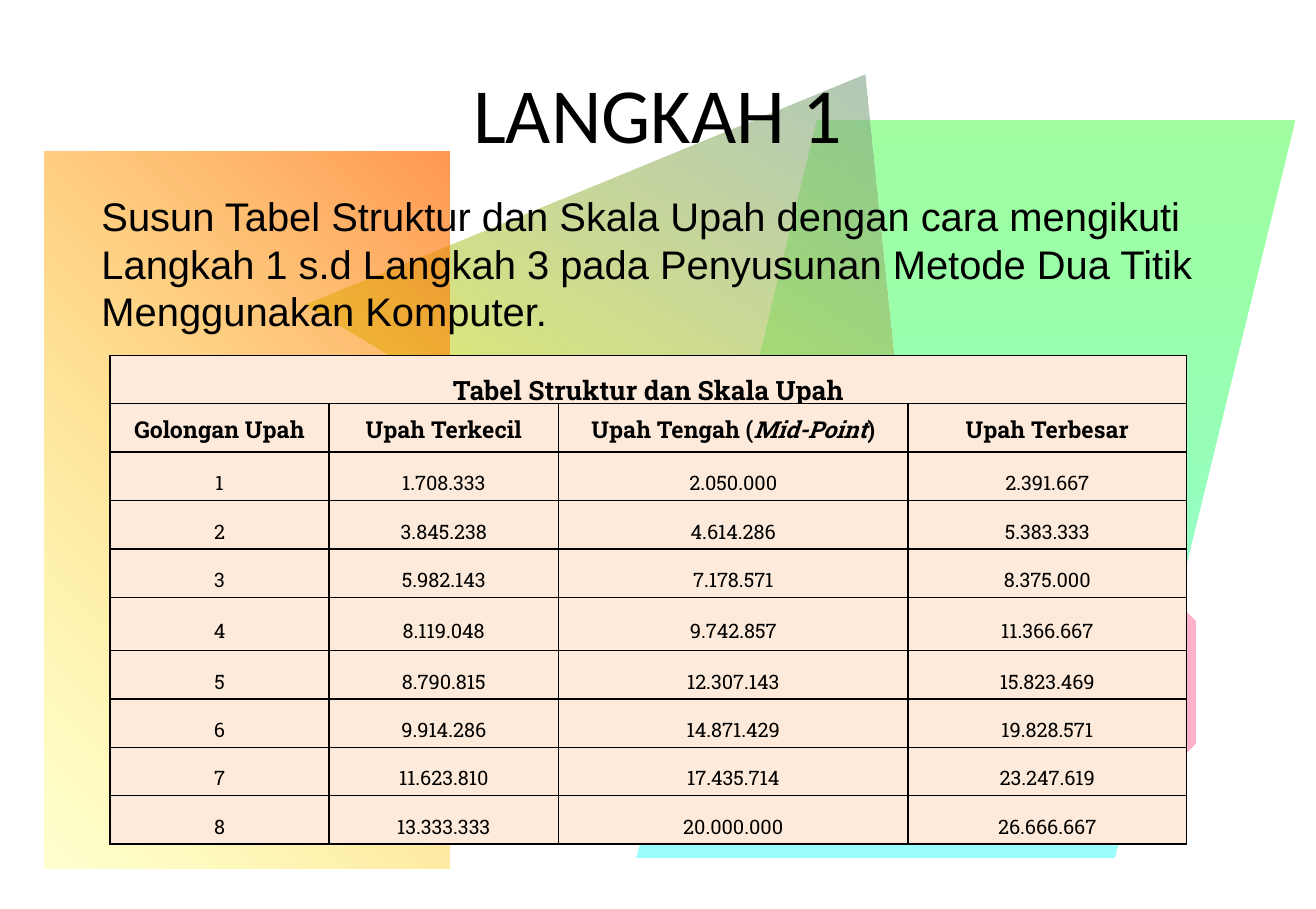
"""Build the wage structure and scale slide."""
import pptx
import pptx.util
import pptx.dml.color
import pptx.enum.shapes
import pptx.enum.text
import pptx.oxml
import pptx.oxml.ns

RGBColor = pptx.dml.color.RGBColor
SHAPE = pptx.enum.shapes.MSO_SHAPE
ANCHOR = pptx.enum.text.MSO_ANCHOR
ALIGN = pptx.enum.text.PP_ALIGN
Pt = pptx.util.Pt

EMU_PER_PX = 4572
BLACK = RGBColor(0, 0, 0)
PEACH = RGBColor(0xFD, 0xEA, 0xDA)
GREEN = RGBColor(0, 0xFF, 0)
CYAN = RGBColor(0x66, 0xFF, 0xFF)
BLUE = RGBColor(0x4F, 0x81, 0xBD)
YELLOW = RGBColor(0xFF, 0xFF, 0)
ORANGE = RGBColor(0xFF, 0x66, 0)
PINK = RGBColor(0xFF, 0x66, 0x99)

BACKDROP = [
    (SHAPE.PARALLELOGRAM, (1064, 202, 1100, 1232), 0, 0.274, 270, ((GREEN, 37), (CYAN, 65))),
    (SHAPE.ISOSCELES_TRIANGLE, (632, 68, 1210, 810), 30.9, 0.5, 270, ((BLUE, 60), (YELLOW, 70))),
    (SHAPE.RECTANGLE, (74, 254, 678, 1198), 0, None, 45, ((YELLOW, 19), (ORANGE, 68))),
    (SHAPE.OCTAGON, (1020, 406, 490, 1468), 90, 0.293, 270, ((PINK, 51), (GREEN, 68))),
]

TITLE = "LANGKAH 1"
BODY = ("Susun Tabel Struktur dan Skala Upah dengan cara mengikuti Langkah 1 s.d "
        "Langkah 3 pada Penyusunan Metode Dua Titik Menggunakan Komputer.")
CAPTION = "Tabel Struktur dan Skala Upah"
HEADERS = [["Golongan Upah"], ["Upah Terkecil"],
           ["Upah Tengah (", "Mid-Point", ")"], ["Upah Terbesar"]]
WAGES = [
    ("1.708.333", "2.050.000", "2.391.667"),
    ("3.845.238", "4.614.286", "5.383.333"),
    ("5.982.143", "7.178.571", "8.375.000"),
    ("8.119.048", "9.742.857", "11.366.667"),
    ("8.790.815", "12.307.143", "15.823.469"),
    ("9.914.286", "14.871.429", "19.828.571"),
    ("11.623.810", "17.435.714", "23.247.619"),
    ("13.333.333", "20.000.000", "26.666.667"),
]
COLUMN_WIDTHS = [366, 384, 584, 466]
ROW_HEIGHT, TALL_ROW_HEIGHT, TALL_ROW = 81, 89, 5

TITLE_FONT = {"name": "Calibri", "size": Pt(47)}
BODY_FONT = {"name": "Arial", "size": Pt(24)}
CAPTION_FONT = {"name": "Roboto Slab", "size": Pt(16), "bold": True}
HEADER_FONT = {**CAPTION_FONT, "size": Pt(14)}
WAGE_FONT = {"name": "Roboto Slab", "size": Pt(12), "bold": False}


def px(*lengths):
    """Turn pixel lengths into a list of EMU."""
    return [pptx.util.Emu(n * EMU_PER_PX) for n in lengths]


def apply(target, values):
    """Set every attribute in a dict of format values."""
    for name, value in values.items():
        setattr(target, name, value)


def add_run(p, text, font):
    """Append a formatted black run and return it."""
    r = p.add_run()
    r.text = text
    apply(r.font, font)
    r.font.color.rgb = BLACK
    return r


def add_backdrop(s, kind, box, rotation, adjustment, angle, stops):
    """Add a translucent shape with a two-colour gradient."""
    sp = s.shapes.add_shape(kind, *px(*box))
    sp.rotation = rotation
    sp.shadow.inherit = False
    sp.line.fill.background()
    if adjustment is not None:
        sp.adjustments[0] = adjustment
    sp.fill.gradient()
    sp.fill.gradient_angle = angle
    for stop, (color, _) in zip(sp.fill.gradient_stops, stops):
        stop.color.rgb = color
    colors = sp._element.spPr.iter(pptx.oxml.ns.qn("a:srgbClr"))
    for clr, (_, opacity) in zip(colors, stops):
        clr.append(pptx.oxml.parse_xml(
            f'<a:alpha {pptx.oxml.ns.nsdecls("a")} val="{opacity * 1000}"/>'))


def add_text(s, box, text, font, align, anchor):
    """Add a wrapping text box with one paragraph."""
    tf = s.shapes.add_textbox(*px(*box)).text_frame
    apply(tf, {"word_wrap": True, "vertical_anchor": anchor})
    p = tf.paragraphs[0]
    p.alignment = align
    add_run(p, text, font)


def add_borders(cell):
    """Draw a thin black line on all four sides of a cell."""
    tcPr = cell._tc.get_or_add_tcPr()
    for side in "LRTB":
        tcPr.append(pptx.oxml.parse_xml(
            f'<a:ln{side} {pptx.oxml.ns.nsdecls("a")} w="12700"><a:solidFill>'
            f'<a:srgbClr val="{BLACK}"/></a:solidFill></a:ln{side}>'))


def fill_cell(cell, texts, font, spacing, anchor=ANCHOR.MIDDLE):
    """Write centred runs in a cell, the second one in italics."""
    side, edge = px(14, 0)
    apply(cell, {"margin_left": side, "margin_right": side, "margin_top": edge,
                 "margin_bottom": edge, "vertical_anchor": anchor})
    p = cell.text_frame.paragraphs[0]
    apply(p, {"alignment": ALIGN.CENTER, "line_spacing": spacing})
    for i, text in enumerate(texts):
        add_run(p, text, font).font.italic = i == 1


def add_wage_table(s):
    """Add the wage table with caption, header and wage rows."""
    heights = [ROW_HEIGHT] * (len(WAGES) + 2)
    heights[TALL_ROW] = TALL_ROW_HEIGHT
    box = px(184, 594, sum(COLUMN_WIDTHS), sum(heights))
    table = s.shapes.add_table(len(heights), len(COLUMN_WIDTHS), *box).table
    for column, width in zip(table.columns, px(*COLUMN_WIDTHS)):
        column.width = width
    for row, height in zip(table.rows, px(*heights)):
        row.height = height
    for cell in table.iter_cells():
        add_borders(cell)
        cell.fill.solid()
        cell.fill.fore_color.rgb = PEACH
    table.cell(0, 0).merge(table.cell(0, len(COLUMN_WIDTHS) - 1))
    fill_cell(table.cell(0, 0), [CAPTION], CAPTION_FONT, 1.5, ANCHOR.BOTTOM)
    for j, texts in enumerate(HEADERS):
        fill_cell(table.cell(1, j), texts, HEADER_FONT, 1.07)
    for grade, wages in enumerate(WAGES, 1):
        for j, text in enumerate((str(grade), *wages)):
            fill_cell(table.cell(grade + 1, j), [text], WAGE_FONT, 1.5)


def main():
    """Build and save the slide."""
    prs = pptx.Presentation()
    prs.slide_width, prs.slide_height = px(2200, 1520)
    s = prs.slides.add_slide(prs.slide_layouts[6])
    for item in BACKDROP:
        add_backdrop(s, *item)
    add_text(s, (110, 60, 1980, 254), TITLE, TITLE_FONT, ALIGN.CENTER, ANCHOR.MIDDLE)
    add_text(s, (150, 310, 1934, 262), BODY, BODY_FONT, ALIGN.LEFT, ANCHOR.TOP)
    add_wage_table(s)
    prs.save("out.pptx")


if __name__ == "__main__":
    main()
